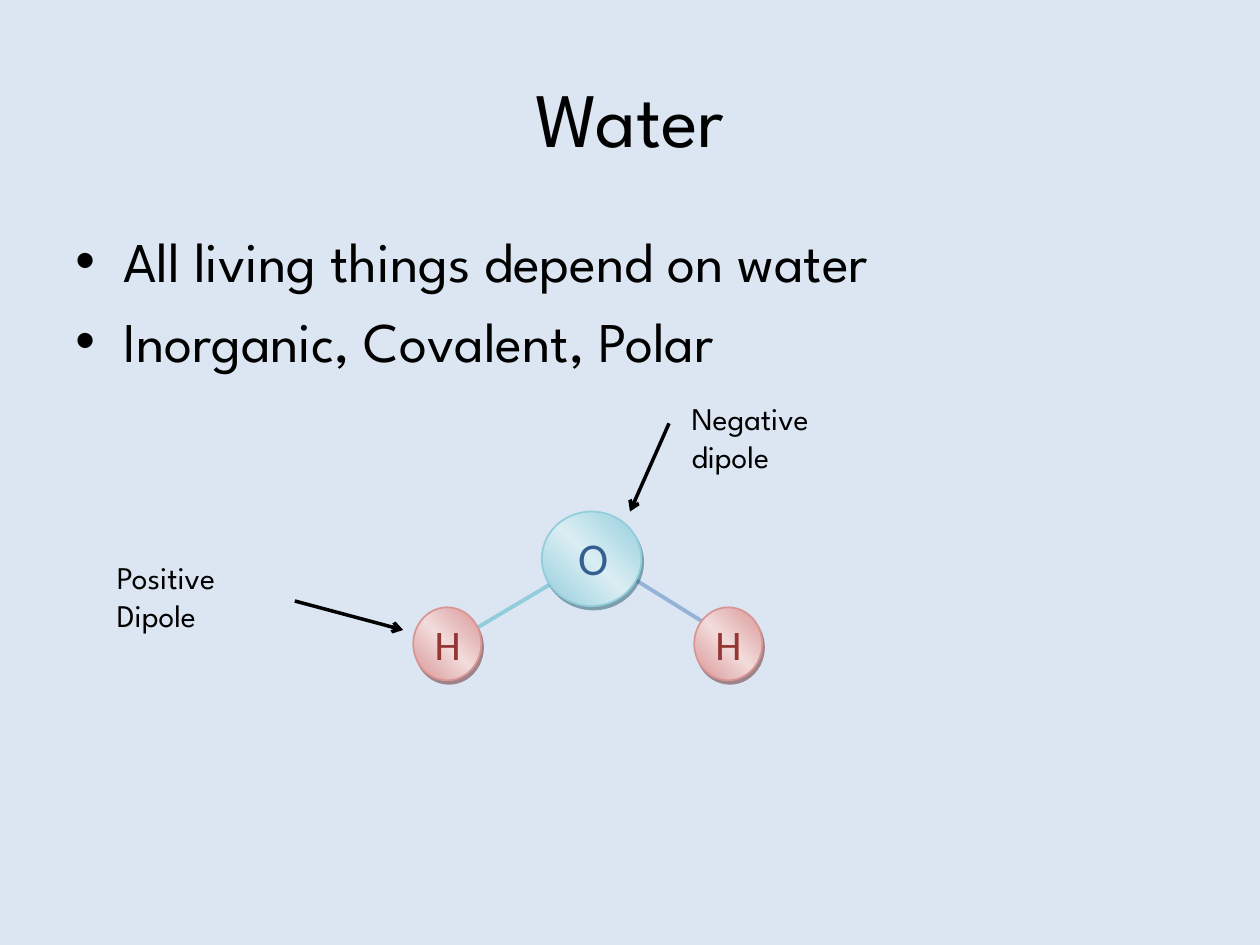
import copy

import pptx
import pptx.dml.color
import pptx.enum.shapes
import pptx.enum.text
import pptx.oxml
import pptx.oxml.ns
import pptx.util
from pptx.util import Inches, Pt

FONT = "League Spartan"
ALIGN = pptx.enum.text.PP_ALIGN
ANCHOR = pptx.enum.text.MSO_ANCHOR
qn = pptx.oxml.ns.qn


def rgb(value):
    return pptx.dml.color.RGBColor.from_string(value)


def add_xml(parent, xml):
    """Append a DrawingML fragment, given without its namespace declaration."""
    tag, rest = xml[1:].split(" ", 1)
    child = pptx.oxml.parse_xml(f"<{tag} {pptx.oxml.ns.nsdecls('a')} {rest}")
    parent.append(child)


def add_text(shapes, text, left, top, width, height, *, size, font=FONT,
             color="000000", align=ALIGN.LEFT, anchor=ANCHOR.TOP,
             before=0, after=0, bullet=False, grow=False):
    box = shapes.add_textbox(Inches(left), Inches(top), Inches(width), Inches(height))
    tf = box.text_frame
    tf.word_wrap = True
    tf.vertical_anchor = anchor
    if grow:
        tf.auto_size = pptx.enum.text.MSO_AUTO_SIZE.SHAPE_TO_FIT_TEXT
    tf.text = text
    for p in tf.paragraphs:
        p.alignment = align
        p.space_before, p.space_after = Pt(before), Pt(after)
        p.font.size, p.font.name = Pt(size), font
        for r in p.runs:
            r.font.size, r.font.name = Pt(size), font
            r.font.color.rgb = rgb(color)
        if bullet:
            pPr = p._p.get_or_add_pPr()
            pPr.set("marL", str(Inches(0.38)))
            pPr.set("indent", str(-Inches(0.38)))
            bullet_xml = ('<a:buFont typeface="Arial"/>', '<a:buChar char="•"/>')
            for offset, xml in enumerate(bullet_xml):
                add_xml(pPr, xml)
                # Bullet elements must precede the default run properties.
                defaults = pPr.find(qn("a:defRPr"))
                if defaults is not None:
                    defaults.addprevious(pPr[-1])
    return box


def add_line(shapes, start, end, color, weight, arrow=False):
    line = shapes.add_connector(pptx.enum.shapes.MSO_CONNECTOR.STRAIGHT,
                                *(Inches(v) for v in (*start, *end)))
    line.line.color.rgb = rgb(color)
    line.line.width = Pt(weight)
    if arrow:
        add_xml(line.line._get_or_add_ln(), '<a:tailEnd type="arrow"/>')
    add_xml(line._element.spPr, "<a:effectLst />")


def add_atom(shapes, left, top, width, height, edge, middle, shadow):
    sp = shapes.add_shape(pptx.enum.shapes.MSO_SHAPE.OVAL, Inches(left),
                          Inches(top), Inches(width), Inches(height))
    sp.fill.gradient()
    sp.fill.gradient_angle = 45
    for stop, position in zip(sp.fill.gradient_stops, (0, 1)):
        stop.color.rgb = rgb(edge)
        stop.position = position
    stops = sp._element.spPr.find(".//" + qn("a:gsLst"))
    stops.insert(1, copy.deepcopy(stops[0]))
    center = sp.fill.gradient_stops[1]
    center.color.rgb = rgb(middle)
    center.position = 0.5
    sp.line.color.rgb = rgb(edge)
    sp.line.width = Pt(1)
    sp.shadow.inherit = False
    add_xml(sp._element.spPr.find(qn("a:effectLst")),
            f'<a:outerShdw dist="{Pt(2.2)}" dir="{63 * 60000}" algn="ctr" rotWithShape="0">'
            f'<a:srgbClr val="{shadow}"><a:alpha val="50000"/></a:srgbClr></a:outerShdw>')


def add_heading(slide, left, top, width, height):
    add_text(slide.shapes, "Water", left, top, width, height, size=44,
             align=ALIGN.CENTER, anchor=ANCHOR.MIDDLE)


def add_facts(slide, left, top, width, height):
    add_text(slide.shapes, "All living things depend on water\nInorganic, Covalent, Polar",
             left, top, width, height, size=32, before=7, bullet=True)


def add_molecule(slide, left, top):
    shapes = slide.shapes.add_group_shape().shapes
    add_line(shapes, (left + 1.15, top + 0.54), (left + 0.41, top + 0.98), "92CDDC", 2.25)
    add_line(shapes, (left + 1.76, top + 0.54), (left + 2.37, top + 0.92), "95B3D7", 2.25)
    hydrogens = (left, left + 2.23)
    add_atom(shapes, left + 1.02, top, 0.79, 0.75, "92CDDC", "DAEEF3", "205867")
    for x in hydrogens:
        add_atom(shapes, x, top + 0.76, 0.54, 0.58, "D99594", "F2DBDB", "622423")
    add_text(shapes, "O", left + 1.21, top + 0.1, 0.46, 0.51, size=26,
             font="Calibri", color="365F91", after=10)
    for x in hydrogens:
        add_text(shapes, "H", x + 0.07, top + 0.8, 0.38, 0.49, size=24,
                 font="Calibri", color="943634", after=10)


def add_dipole_label(slide, text, left, top, start, end):
    """Place a label and its arrow, whose ends are offsets from the label's corner."""
    start, end = ((left + x, top + y) for x, y in (start, end))
    add_line(slide.shapes, start, end, "000000", 2, arrow=True)
    add_text(slide.shapes, text, left, top, 1.64, 0.4, size=18, grow=True)


def main():
    prs = pptx.Presentation()
    prs.slide_width, prs.slide_height = Inches(10), Inches(7.5)
    slide = prs.slides.add_slide(prs.slide_layouts[6])
    slide.background.fill.solid()
    slide.background.fill.fore_color.rgb = rgb("DCE6F2")
    add_heading(slide, 0.5, 0.3, 9, 1.25)
    add_facts(slide, 0.5, 1.75, 9, 4.95)
    add_molecule(slide, 3.28, 4.06)
    add_dipole_label(slide, "Negative dipole", 5.39, 3.12, (-0.08, 0.24), (-0.39, 0.94))
    add_dipole_label(slide, "Positive Dipole", 0.83, 4.38, (1.51, 0.39), (2.37, 0.62))
    prs.save("out.pptx")


if __name__ == "__main__":
    main()
